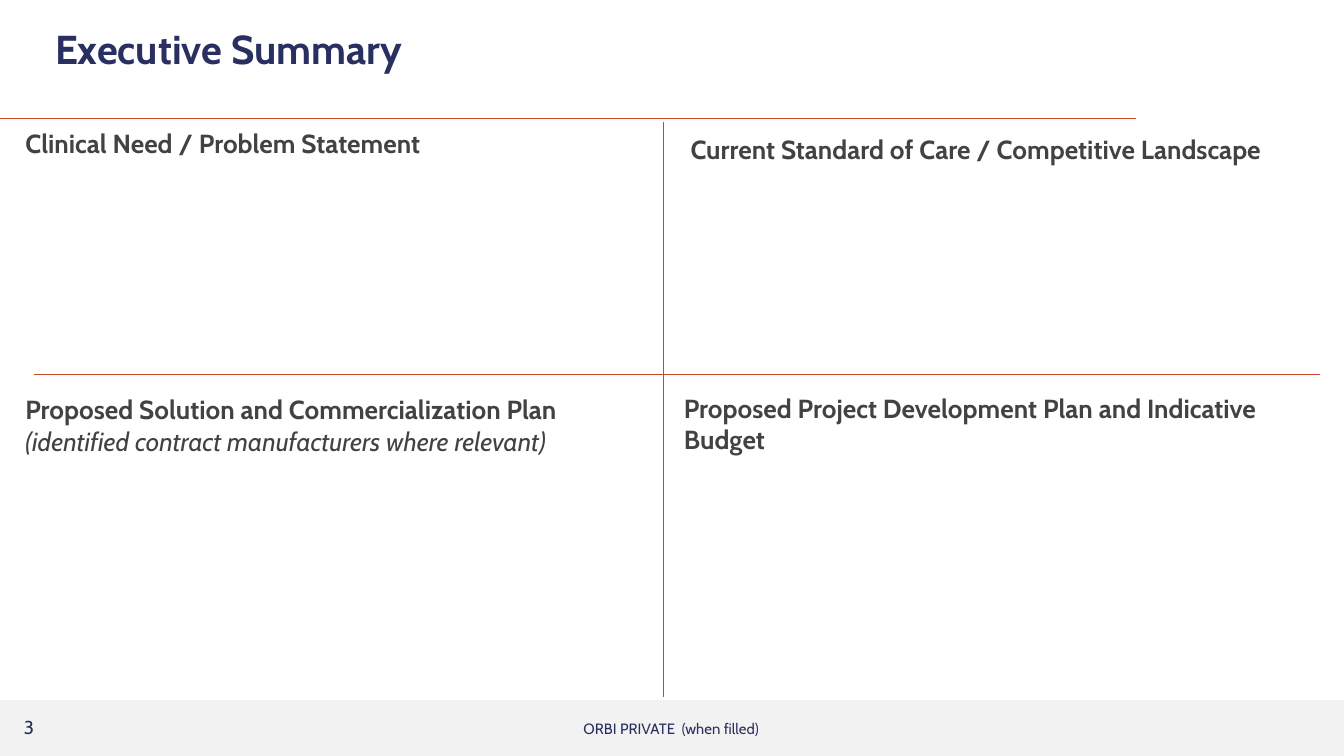
from lxml.etree import SubElement
from pptx import Presentation
from pptx.dml.color import RGBColor
from pptx.enum.shapes import MSO_CONNECTOR, MSO_SHAPE
from pptx.enum.text import MSO_ANCHOR, PP_ALIGN
from pptx.oxml.ns import qn
from pptx.util import Inches, Pt

NAVY = RGBColor(0x29, 0x2F, 0x60)
FOOTER_NAVY = RGBColor(0x28, 0x2F, 0x5F)
GREY = RGBColor(0x42, 0x42, 0x42)
RUST = RGBColor(0xC7, 0x48, 0x2B)
BAND = RGBColor(0xF2, 0xF2, 0xF2)

W = 10
H = W * 9 / 16
BAND_TOP = 5.21
MID_X, MID_Y = 4.94, 2.79

# Content
TITLE = "Executive Summary"
PAGE = "3"
FOOTER = "ORBI PRIVATE  (when filled)"

HEADING = dict(size=Pt(14), bold=True, color=GREY)
NOTE = dict(size=Pt(14), bold=False, italic=True, color=GREY)
SMALL = dict(size=Pt(8), color=FOOTER_NAVY)
NUMBER = dict(size=Pt(10), color=FOOTER_NAVY)

# Quadrants: left, top, width, height, lines of (text, format)
QUADRANTS = [
    (0.09, 0.9, 3.98, 0.34, [("Clinical Need / Problem Statement", HEADING)]),
    (5.04, 0.94, 5.06, 0.34,
     [("Current Standard of Care / Competitive Landscape", HEADING)]),
    (0.09, 2.88, 5.02, 0.57,
     [("Proposed Solution and Commercialization Plan", HEADING),
      ("(identified contract manufacturers where relevant)", NOTE)]),
    (4.99, 2.87, 4.74, 0.57,
     [("Proposed Project Development Plan and Indicative Budget", HEADING)]),
]

# Rules: x1, y1, x2, y2, line width
RULES = [
    (0, 0.88, 8.45, 0.88, 0.75),
    (MID_X, 0.91, MID_X, 5.19, 0.5),
    (9.82, MID_Y, 0.25, MID_Y, 0.5),
]


def style(font, fmt):
    font.name = "Cabin"
    for key, value in fmt.items():
        if key == "color":
            font.color.rgb = value
        else:
            setattr(font, key, value)


def add_text(s, left, top, width, height, lines, **para):
    box = s.shapes.add_textbox(*map(Inches, (left, top, width, height)))
    tf = box.text_frame
    tf.word_wrap = True
    for i, (text, fmt) in enumerate(lines):
        p = tf.add_paragraph() if i else tf.paragraphs[0]
        for key, value in para.items():
            setattr(p, key, value)
        r = p.add_run()
        r.text = text
        style(r.font, fmt)


def add_rule(s, x1, y1, x2, y2, width):
    line = s.shapes.add_connector(
        MSO_CONNECTOR.STRAIGHT, *map(Inches, (x1, y1, x2, y2)))
    line.line.color.rgb = RUST
    line.line.width = Pt(width)
    SubElement(line._element.spPr, qn("a:effectLst"))


prs = Presentation()
prs.slide_width, prs.slide_height = Inches(W), Inches(H)
s = prs.slides.add_slide(prs.slide_layouts[5])

# Title, raised within its box by the bottom inset
sp = s.shapes.title
sp.left, sp.top, sp.width, sp.height = map(Inches, (0.31, 0.29, 9.42, 0.55))
tf = sp.text_frame
tf.text = TITLE
tf.vertical_anchor = MSO_ANCHOR.MIDDLE
tf.margin_top, tf.margin_bottom = 0, Inches(0.36)
p = tf.paragraphs[0]
p.alignment = PP_ALIGN.LEFT
p.line_spacing = 0.9
style(p.runs[0].font, dict(size=Pt(21.6), bold=True, color=NAVY))

# Footer band, page number and marking
band = s.shapes.add_shape(MSO_SHAPE.RECTANGLE, 0, Inches(BAND_TOP),
                          Inches(W), Inches(H - BAND_TOP))
band.shadow.inherit = False
band.fill.solid()
band.fill.fore_color.rgb = BAND
band.line.fill.background()
add_text(s, 0.08, 5.28, 0.72, 0.27, [(PAGE, NUMBER)])
add_text(s, 3.59, 5.32, 2.81, 0.23, [(FOOTER, SMALL)],
         alignment=PP_ALIGN.CENTER, line_spacing=0.9)

# Dividing rules and quadrant headings
for rule in RULES:
    add_rule(s, *rule)
for quadrant in QUADRANTS:
    add_text(s, *quadrant)

prs.save("out.pptx")
